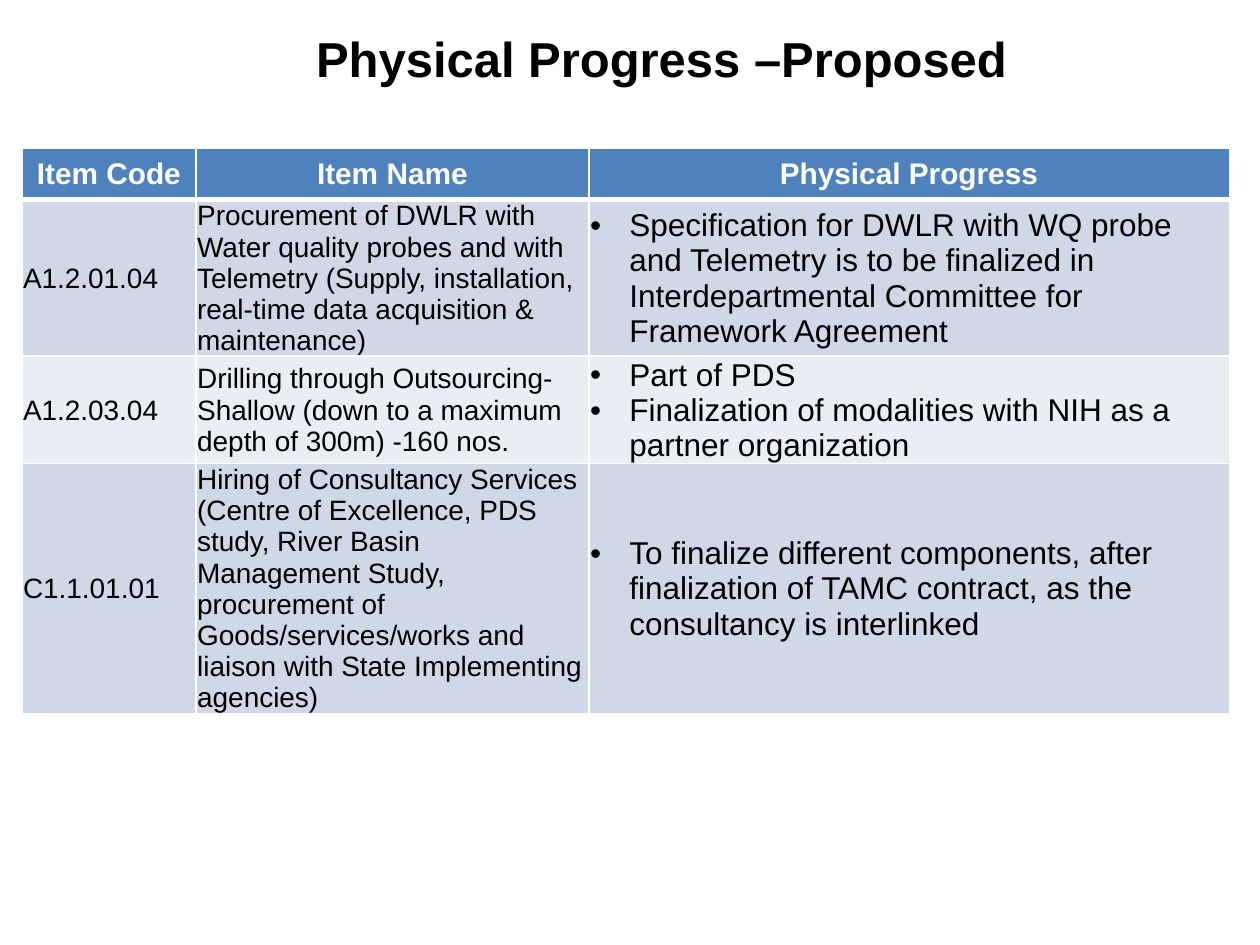
"""Build the physical progress slide."""
from dataclasses import dataclass

from lxml import etree
from pptx import Presentation
from pptx import util as u
from pptx.dml.color import RGBColor
from pptx.enum import text
from pptx.oxml import ns

HUES = {
    "head": "4F81BD",
    "odd": "D0D8E8",
    "even": "E9EDF4",
    "ink": "000000",
    "white": "FFFFFF",
}
FONT = "Arial"
HEADS = ("Item Code", "Item Name", "Physical Progress")
COLS = (99.5, 224.5, 366)
HEAD_TALL = 29.5


@dataclass
class Item:
    """One row of the progress table."""
    code: str
    name: str
    steps: tuple[str, ...]
    tall: float


@dataclass
class Style:
    """Look of one run of text."""
    size: float
    hue: str = "ink"
    bold: bool = False


ITEMS = (
    Item("A1.2.01.04",
         "Procurement of DWLR with Water quality probes and with Telemetry "
         "(Supply, installation, real-time data acquisition & maintenance)",
         ("Specification for DWLR with WQ probe and Telemetry is to be finalized "
          "in Interdepartmental Committee for Framework Agreement",), 89.5),
    Item("A1.2.03.04",
         "Drilling through Outsourcing-Shallow (down to a maximum depth of 300m) "
         "-160 nos.",
         ("Part of PDS",
          "Finalization of modalities with NIH as a partner organization"), 61),
    Item("C1.1.01.01",
         "Hiring of Consultancy Services (Centre of Excellence, PDS study, River "
         "Basin Management Study, procurement of Goods/services/works and liaison "
         "with State Implementing agencies)",
         ("To finalize different components, after finalization of TAMC contract, "
          "as the consultancy is interlinked",), 143),
)
TITLE = Style(28, bold=True)
HEAD = Style(17, "white", True)
BODY = Style(16)
STEP = Style(18)


def paint(hue: str) -> RGBColor:
    """Look up a colour by name."""
    return RGBColor.from_string(HUES[hue])


def write(para, words: str, style: Style, align=text.PP_ALIGN.LEFT) -> None:
    """Add one formatted run to a paragraph."""
    para.alignment = align
    run = para.add_run()
    run.text = words
    font = run.font
    font.name, font.size, font.bold = FONT, u.Pt(style.size), style.bold
    font.color.rgb = paint(style.hue)


def hang(para, gap: float, mark: str = "") -> None:
    """Give a paragraph a hanging indent and, if asked, a bullet."""
    props = para._p.get_or_add_pPr()
    props.set("marL", str(u.Pt(gap)))
    props.set("indent", str(-u.Pt(gap)))
    if mark:
        face = etree.SubElement(props, ns.qn("a:buFont"))
        face.set("typeface", FONT)
        etree.SubElement(props, ns.qn("a:buChar")).set("char", mark)


def edge(cell, side: str, wide: float) -> None:
    """Draw one white border of a cell."""
    line = etree.SubElement(cell._tc.get_or_add_tcPr(), ns.qn(f"a:ln{side}"))
    line.set("w", str(u.Pt(wide)))
    fill = etree.SubElement(line, ns.qn("a:solidFill"))
    etree.SubElement(fill, ns.qn("a:srgbClr")).set("val", HUES["white"])


def dress(cell, hue: str, top: float, base: float) -> None:
    """Set a cell's margins, borders and fill."""
    cell.vertical_anchor = text.MSO_ANCHOR.MIDDLE
    cell.margin_left = cell.margin_right = cell.margin_top = u.Pt(0.7)
    cell.margin_bottom = u.Pt(0)
    for side, wide in (("L", 1), ("R", 1), ("T", top), ("B", base)):
        edge(cell, side, wide)
    cell.fill.solid()
    cell.fill.fore_color.rgb = paint(hue)


def add_title(slide) -> None:
    """Place and format the slide title."""
    title = slide.shapes.title
    title.left, title.top = u.Pt(72), u.Pt(0)
    title.width, title.height = u.Pt(612), u.Pt(66)
    title.text_frame.vertical_anchor = text.MSO_ANCHOR.MIDDLE
    para = title.text_frame.paragraphs[0]
    write(para, "Physical Progress –Proposed", TITLE, text.PP_ALIGN.CENTER)
    hang(para, 40.5)


def add_grid(slide) -> None:
    """Draw the table of items."""
    talls = [HEAD_TALL, *(item.tall for item in ITEMS)]
    grid = slide.shapes.add_table(
        len(talls), len(COLS), u.Pt(12.5), u.Pt(84.5),
        u.Pt(sum(COLS)), u.Pt(sum(talls))).table
    for col, wide in zip(grid.columns, COLS):
        col.width = u.Pt(wide)
    for row, tall in zip(grid.rows, talls):
        row.height = u.Pt(tall)
    for col, words in enumerate(HEADS):
        cell = grid.cell(0, col)
        dress(cell, "head", 1, 3)
        write(cell.text_frame.paragraphs[0], words, HEAD, text.PP_ALIGN.CENTER)
    for num, item in enumerate(ITEMS, 1):
        cells = [grid.cell(num, col) for col in range(len(COLS))]
        for cell in cells:
            dress(cell, "odd" if num % 2 else "even", 3 if num == 1 else 1, 1)
        for cell, words in zip(cells, (item.code, item.name)):
            write(cell.text_frame.paragraphs[0], words, BODY)
        frame = cells[-1].text_frame
        for pos, step in enumerate(item.steps):
            para = frame.add_paragraph() if pos else frame.paragraphs[0]
            write(para, step, STEP)
            hang(para, 22.5, "•")


def main() -> None:
    """Make the deck and save it."""
    deck = Presentation()
    deck.slide_width, deck.slide_height = u.Pt(720), u.Pt(540)
    slide = deck.slides.add_slide(deck.slide_layouts[5])
    add_title(slide)
    add_grid(slide)
    deck.save("out.pptx")


if __name__ == "__main__":
    main()
